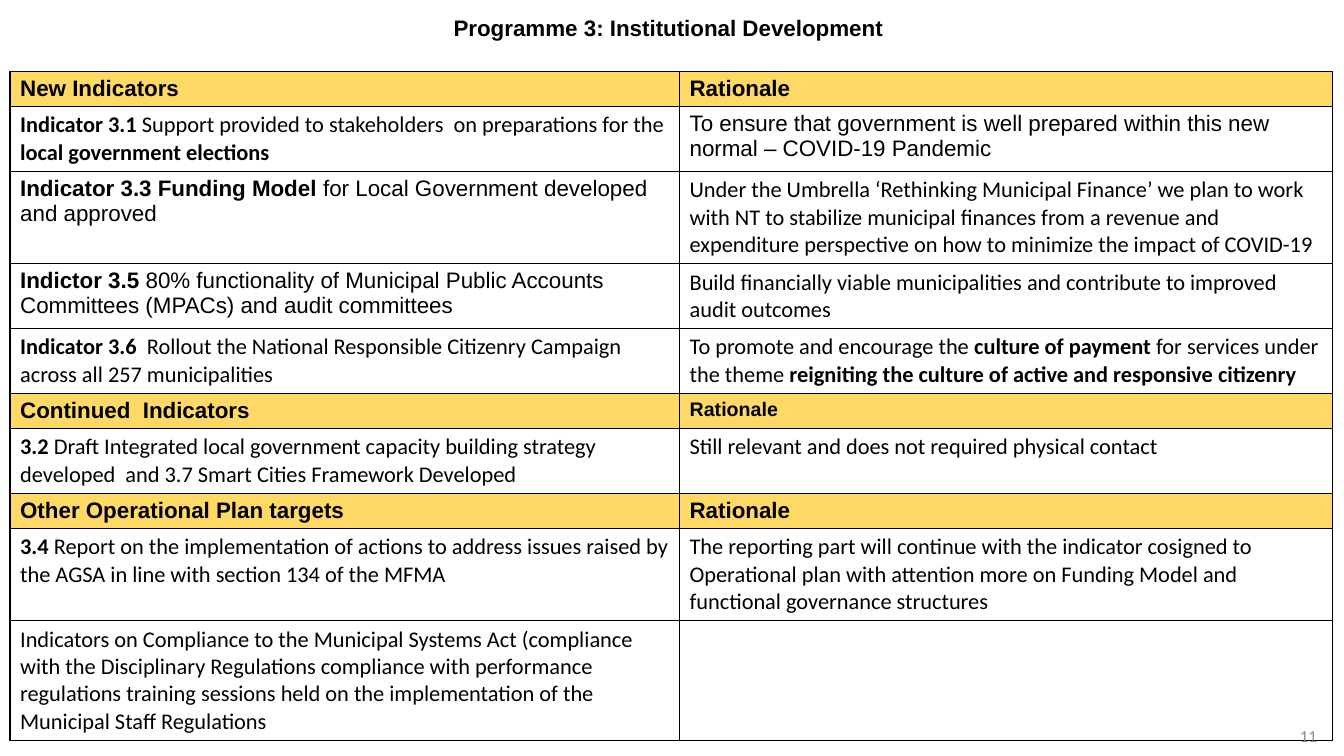
from lxml import etree
from pptx import Presentation
from pptx.dml.color import RGBColor
from pptx.enum.text import MSO_ANCHOR as Anchor, PP_ALIGN as Align
from pptx.oxml.ns import qn
from pptx.util import Inches, Pt

BLACK = RGBColor(0x00, 0x00, 0x00)
GOLD = RGBColor(0xFF, 0xD9, 0x66)
GREY = RGBColor(0x8C, 0x8C, 0x8C)
SANS, BODY = "Arial", "Calibri"

WIDTHS = [6.64, 6.48]

# Each row: height, is it a heading, then (text, format) for each cell.
# Words between double asterisks are bold.
ROWS = [
    (0.34, True, ("**New Indicators**", {"font": SANS}),
     ("**Rationale**", {"font": SANS})),
    (0.58, False,
     ("**Indicator 3.1** Support provided to stakeholders  on preparations "
      "for the **local government elections**", {}),
     ("To ensure that government is well prepared within this new normal – "
      "COVID-19 Pandemic", {"font": SANS})),
    (0.83, False,
     ("**Indicator 3.3 Funding Model **for Local Government developed and "
      "approved", {"font": SANS}),
     ("Under the Umbrella ‘Rethinking Municipal Finance’ we plan to work "
      "with NT to stabilize municipal finances from a revenue and "
      "expenditure perspective on how to minimize the impact of COVID-19",
      {})),
    (0.58, False,
     ("**Indictor 3.5 **80% functionality of Municipal Public Accounts "
      "Committees (MPACs) and audit committees", {"font": SANS}),
     ("Build financially viable municipalities and contribute to improved "
      "audit outcomes", {})),
    (0.52, False,
     ("**Indicator 3.6 ** Rollout the National Responsible Citizenry "
      "Campaign  across all 257 municipalities", {}),
     ("To promote and encourage the **culture of payment **for services "
      "under the theme **reigniting the culture of active and responsive "
      "citizenry**", {})),
    (0.34, True, ("**Continued  Indicators**", {"font": SANS}),
     ("**Rationale**", {"font": SANS, "size": 14})),
    (0.46, False,
     ("**3.2** Draft Integrated local government capacity building strategy "
      "developed  and 3.7 Smart Cities Framework Developed", {}),
     ("Still relevant and does not required physical contact", {})),
    (0.34, True, ("**Other Operational Plan targets**", {"font": SANS}),
     ("**Rationale**", {"font": SANS})),
    (0.83, False,
     ("**3.4** Report on the implementation of actions to address issues "
      "raised by the AGSA in line with section 134 of the MFMA", {}),
     ("The reporting part will continue with the indicator cosigned to "
      "Operational plan with attention more on Funding Model and functional "
      "governance structures", {})),
    (1.07, False,
     ("Indicators on Compliance to the Municipal Systems Act (compliance "
      "with the Disciplinary Regulations compliance with performance "
      "regulations training sessions held on the implementation of the "
      "Municipal Staff Regulations", {}),
     ("", {})),
]


def write(frame, text, font=BODY, size=16, color=BLACK, align=None,
          space=None):
    """Fill a text frame, with bold for the words between asterisks."""
    para = frame.paragraphs[0]
    para.alignment = align
    para.line_spacing = space
    for i, part in enumerate(text.split("**")):
        if part:
            run = para.add_run()
            run.text = part
            run.font.name = font
            run.font.size = Pt(size)
            run.font.bold = i % 2 == 1
            run.font.color.rgb = color


def border(cell):
    """Draw a thin black line on all four sides of a cell."""
    props = cell._tc.get_or_add_tcPr()
    for i, side in enumerate(("a:lnL", "a:lnR", "a:lnT", "a:lnB")):
        line = etree.Element(qn(side), w=str(Pt(1)))
        fill = etree.SubElement(line, qn("a:solidFill"))
        etree.SubElement(fill, qn("a:srgbClr"), val=str(BLACK))
        props.insert(i, line)


def add_head(slide, x, y, w, h):
    title = slide.shapes.title
    title.left, title.top = Inches(x), Inches(y)
    title.width, title.height = Inches(w), Inches(h)
    title.text_frame.vertical_anchor = Anchor.MIDDLE
    write(title.text_frame, "**Programme 3: Institutional Development **",
          font=SANS, align=Align.CENTER, space=0.9)


def add_grid(slide, x, y, w, h):
    frame = slide.shapes.add_table(len(ROWS), len(WIDTHS), Inches(x),
                                   Inches(y), Inches(w), Inches(h))
    table = frame.table
    table.first_row = table.horz_banding = False
    for col, width in zip(table.columns, WIDTHS):
        col.width = Inches(width)
    for row, (height, head, *cells) in zip(table.rows, ROWS):
        row.height = Inches(height)
        for cell, (text, style) in zip(row.cells, cells):
            if head:
                cell.fill.solid()
                cell.fill.fore_color.rgb = GOLD
            else:
                cell.fill.background()
            border(cell)
            write(cell.text_frame, text, **style)


def add_page(slide, x, y, w, h):
    box = slide.shapes.add_textbox(Inches(x), Inches(y), Inches(w), Inches(h))
    box.text_frame.word_wrap = True
    box.text_frame.vertical_anchor = Anchor.MIDDLE
    write(box.text_frame, "11", size=12, color=GREY, align=Align.RIGHT)


def main():
    deck = Presentation()
    deck.slide_width, deck.slide_height = Inches(13.33), Inches(7.5)
    slide = deck.slides.add_slide(deck.slide_layouts[5])
    add_grid(slide, 0.1, 0.71, sum(WIDTHS), 6.6)
    add_page(slide, 10.16, 7.1, 3, 0.4)
    add_head(slide, 2.35, 0, 8.62, 0.59)
    deck.save("out.pptx")


if __name__ == "__main__":
    main()
